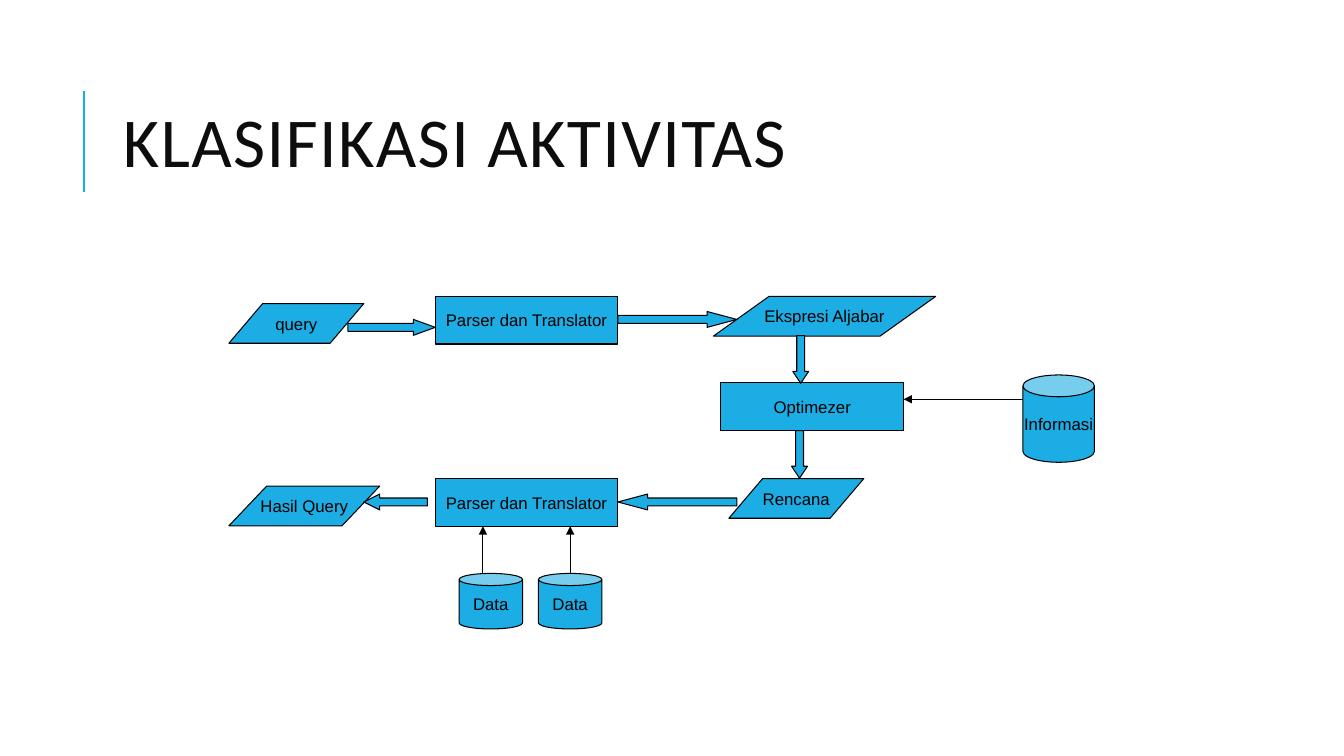
from typing import NamedTuple

from lxml import etree
from pptx import Presentation
from pptx.dml.color import RGBColor
from pptx.enum import shapes, text
from pptx.oxml import ns
from pptx.util import Cm, Pt

BLUE = RGBColor(0x1C, 0xAD, 0xE4)
BLACK = RGBColor(0, 0, 0)
TITLE_COLOR = RGBColor(0x0D, 0x0D, 0x0D)

KIND = shapes.MSO_SHAPE
THICKNESS = 0.4  # full width of a block arrow, cm


class Node(NamedTuple):
    label: str
    kind: KIND
    left: float
    top: float
    width: float
    height: float


class BlockArrow(NamedTuple):
    kind: KIND
    left: float
    top: float
    length: float


class Line(NamedTuple):
    x1: float
    y1: float
    x2: float
    y2: float
    color: RGBColor = BLACK
    weight: float = 0.75
    arrow: bool = True


NODES = [
    Node("query", KIND.PARALLELOGRAM, 5.77, 7.65, 3.4, 1),
    Node("Parser dan Translator", KIND.RECTANGLE, 10.97, 7.47, 4.6, 1.2),
    Node("Ekspresi Aljabar", KIND.PARALLELOGRAM, 17.98, 7.47, 5.6, 1),
    Node("Optimezer", KIND.RECTANGLE, 18.17, 9.65, 4.6, 1.2),
    Node("Rencana", KIND.PARALLELOGRAM, 18.37, 12.06, 3.4, 1),
    Node("Parser dan Translator", KIND.RECTANGLE, 10.97, 12.06, 4.6, 1.2),
    Node("Hasil Query", KIND.PARALLELOGRAM, 5.77, 12.25, 3.8, 1),
    Node("Data", KIND.CAN, 11.57, 14.45, 1.6, 1.4),
    Node("Data", KIND.CAN, 13.57, 14.45, 1.6, 1.4),
    Node("Informasi", KIND.CAN, 25.78, 9.45, 1.8, 2.2),
]

BLOCK_ARROWS = [
    BlockArrow(KIND.RIGHT_ARROW, 8.77, 8.05, 2.2),
    BlockArrow(KIND.RIGHT_ARROW, 15.57, 7.85, 3),
    BlockArrow(KIND.DOWN_ARROW, 19.98, 8.46, 1.2),
    BlockArrow(KIND.DOWN_ARROW, 19.95, 10.85, 1.2),
    BlockArrow(KIND.LEFT_ARROW, 15.57, 12.45, 3),
    BlockArrow(KIND.LEFT_ARROW, 9.17, 12.45, 1.6),
]

LINES = [
    Line(2.12, 4.83, 2.12, 2.29, BLUE, 1.5, arrow=False),
    Line(12.17, 14.45, 12.17, 13.26),
    Line(14.37, 14.45, 14.37, 13.26),
    Line(25.78, 10.06, 22.77, 10.06),
]


def add_blue_shape(s, kind: KIND, left: float, top: float, width: float, height: float):
    sp = s.shapes.add_shape(kind, Cm(left), Cm(top), Cm(width), Cm(height))
    sp.shadow.inherit = False
    sp.fill.solid()
    sp.fill.fore_color.rgb = BLUE
    sp.line.color.rgb = BLACK
    sp.line.width = Pt(0.75)
    return sp


def add_node(s, node: Node) -> None:
    sp = add_blue_shape(s, *node[1:])
    if node.kind == KIND.PARALLELOGRAM:
        sp.adjustments[0] = node.width / 4 / node.height
    elif node.kind == KIND.CAN:
        sp.adjustments[0] = 0.25 * node.height / node.width
    tf = sp.text_frame
    tf.word_wrap = False
    tf.vertical_anchor = text.MSO_ANCHOR.MIDDLE
    p = tf.paragraphs[0]
    p.text = node.label
    p.alignment = text.PP_ALIGN.CENTER
    p.font.name = "Arial"
    p.font.size = Pt(12)
    p.font.color.rgb = BLACK


def add_block_arrow(s, arrow: BlockArrow) -> None:
    """Draw a block arrow whose head takes a quarter of its length."""
    size = (arrow.length, THICKNESS)
    if arrow.kind == KIND.DOWN_ARROW:
        size = size[::-1]
    sp = add_blue_shape(s, arrow.kind, arrow.left, arrow.top, *size)
    sp.adjustments[0] = 0.5
    sp.adjustments[1] = arrow.length / 4 / THICKNESS


def add_line(s, line: Line) -> None:
    sp = s.shapes.add_connector(
        shapes.MSO_CONNECTOR.STRAIGHT,
        Cm(line.x1), Cm(line.y1), Cm(line.x2), Cm(line.y2),
    )
    sp.line.color.rgb = line.color
    sp.line.width = Pt(line.weight)
    if line.arrow:
        ln = sp.line._get_or_add_ln()
        etree.SubElement(ln, ns.qn("a:tailEnd"), type="triangle")
    etree.SubElement(sp._element.spPr, ns.qn("a:effectLst"))


def format_title(sp) -> None:
    sp.left, sp.top, sp.width, sp.height = Cm(2.84), Cm(1.63), Cm(27), Cm(4.17)
    tf = sp.text_frame
    tf.word_wrap = True
    tf.auto_size = text.MSO_AUTO_SIZE.NONE
    tf.vertical_anchor = text.MSO_ANCHOR.MIDDLE
    p = tf.paragraphs[0]
    p.alignment = text.PP_ALIGN.LEFT
    p.line_spacing = 0.8
    p.font.name = "Calibri"
    p.font.size = Pt(50)
    p.font.color.rgb = TITLE_COLOR
    r = p.add_run()
    r.text = "KLASIFIKASI AKTIVITAS"
    r.font._element.set("spc", "100")


def main() -> None:
    prs = Presentation()
    prs.slide_width, prs.slide_height = Cm(33.87), Cm(19.05)
    s = prs.slides.add_slide(prs.slide_layouts[5])
    format_title(s.shapes.title)
    for node in NODES:
        add_node(s, node)
    for arrow in BLOCK_ARROWS:
        add_block_arrow(s, arrow)
    for line in LINES:
        add_line(s, line)
    prs.save("out.pptx")


if __name__ == "__main__":
    main()
